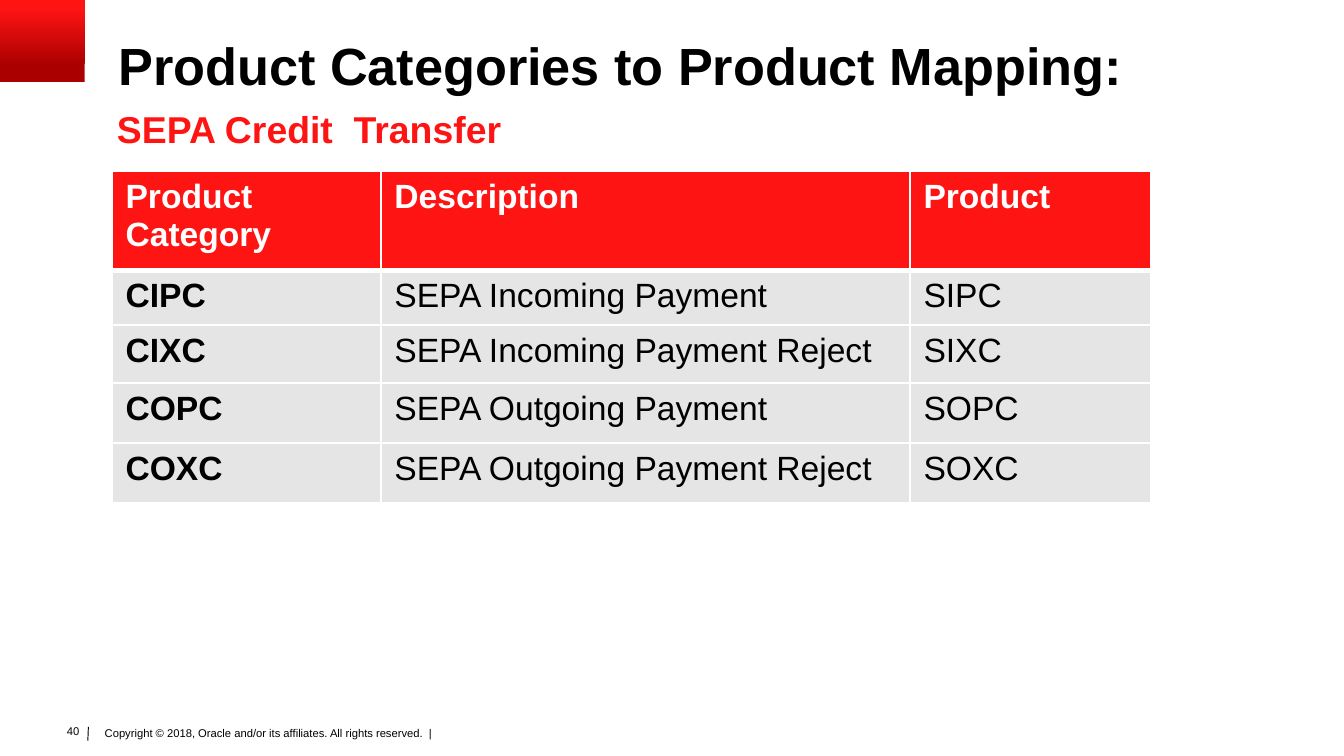
from lxml.etree import SubElement
from pptx import Presentation
from pptx.dml.color import RGBColor
from pptx.enum.shapes import MSO_CONNECTOR as Connector, MSO_SHAPE as Shape
from pptx.enum.text import MSO_ANCHOR as Anchor, PP_ALIGN as Align
from pptx.oxml.ns import qn
from pptx.util import Cm, Pt


def color(value):
    return RGBColor.from_string(value)


def write(frame, text, size, hex_color, bold=False):
    frame.text = text
    font = frame.paragraphs[0].runs[0].font
    font.name = "Arial"
    font.size = Pt(size)
    font.bold = bold
    font.color.rgb = color(hex_color)


deck = Presentation()
deck.slide_width = Cm(25.4)
deck.slide_height = Cm(14.29)
page = deck.slides.add_slide(deck.slide_layouts[1])

accent = page.shapes.add_shape(Shape.RECTANGLE, 0, 0, Cm(1.6), Cm(1.55))
accent.shadow.inherit = False
accent.line.fill.background()
accent.fill.gradient()
accent.fill.gradient_angle = 90
for stop, (position, shade) in zip(accent.fill.gradient_stops, [(0.2, "AA0000"), (0.9, "FF1414")]):
    stop.position = position
    stop.color.rgb = color(shade)

title, subtitle = page.shapes.title, page.placeholders[1]
headings = [
    (title, 2.24, 0.69, 1.22, Anchor.MIDDLE, "Product Categories to Product Mapping:", 28, "000000"),
    (subtitle, 2.21, 2.01, 0.84, Anchor.BOTTOM, "SEPA Credit  Transfer", 20, "FF1414"),
]
for box, left, top, height, anchor, text, size, shade in headings:
    box.left, box.top, box.width, box.height = Cm(left), Cm(top), Cm(22.86), Cm(height)
    frame = box.text_frame
    frame.margin_left = frame.margin_right = frame.margin_top = frame.margin_bottom = 0
    frame.vertical_anchor = anchor
    write(frame, text, size, shade, True)
    para = frame.paragraphs[0]
    para.alignment = Align.LEFT
    para.space_before = Pt(0)
title.text_frame.paragraphs[0].line_spacing = 0.9
bullet_props = subtitle.text_frame.paragraphs[0]._p.get_or_add_pPr()
bullet_props.set("marL", "0")
bullet_props.set("indent", "0")
SubElement(bullet_props, qn("a:buNone"))

rows = [
    ("Product Category", "Description", "Product"),
    ("CIPC", "SEPA Incoming Payment", "SIPC"),
    ("CIXC", "SEPA Incoming Payment Reject", "SIXC"),
    ("COPC", "SEPA Outgoing Payment", "SOPC"),
    ("COXC", "SEPA Outgoing Payment Reject", "SOXC"),
]
table = page.shapes.add_table(len(rows), 3, Cm(2.12), Cm(3.24), Cm(19.63), Cm(6.26)).table
for column, width in zip(table.columns, [5.08, 10, 4.55]):
    column.width = Cm(width)
for row, height in zip(table.rows, [1.87, 1.03, 1.1, 1.14, 1.12]):
    row.height = Cm(height)
for row_index, row in enumerate(rows):
    header = row_index == 0
    for column_index, text in enumerate(row):
        cell = table.cell(row_index, column_index)
        props = cell._tc.get_or_add_tcPr()
        for side in "LRTB":
            thick = (header and side == "B") or (row_index == 1 and side == "T")
            border = SubElement(props, qn(f"a:ln{side}"), w=str(Pt(3 if thick else 1)))
            SubElement(SubElement(border, qn("a:solidFill")), qn("a:srgbClr"), val="FFFFFF")
        cell.fill.solid()
        cell.fill.fore_color.rgb = color("FF1414" if header else "E5E5E5")
        write(cell.text_frame, text, 18, "FFFFFF" if header else "000000", header or column_index == 0)

copyright_box = page.shapes.add_textbox(Cm(1.88), Cm(13.67), Cm(16.59), Cm(0.61))
frame = copyright_box.text_frame
frame.word_wrap = True
frame.margin_left = frame.margin_right = Cm(0.1)
frame.margin_top = frame.margin_bottom = Cm(0.05)
write(frame, "Copyright © 2018, Oracle and/or its affiliates. All rights reserved.  |", 6, "000000")

number_box = page.shapes.add_textbox(Cm(0.99), Cm(13.56), Cm(0.76), Cm(0.51))
write(number_box.text_frame, "40", 6, "000000")
number_box.text_frame.paragraphs[0].alignment = Align.RIGHT

divider = page.shapes.add_connector(Connector.STRAIGHT, Cm(1.67), Cm(13.74), Cm(1.66), Cm(14))
divider.line.color.rgb = color("000000")
divider.line.width = Pt(0.5)
SubElement(divider._element.spPr, qn("a:effectLst"))

deck.save("out.pptx")
